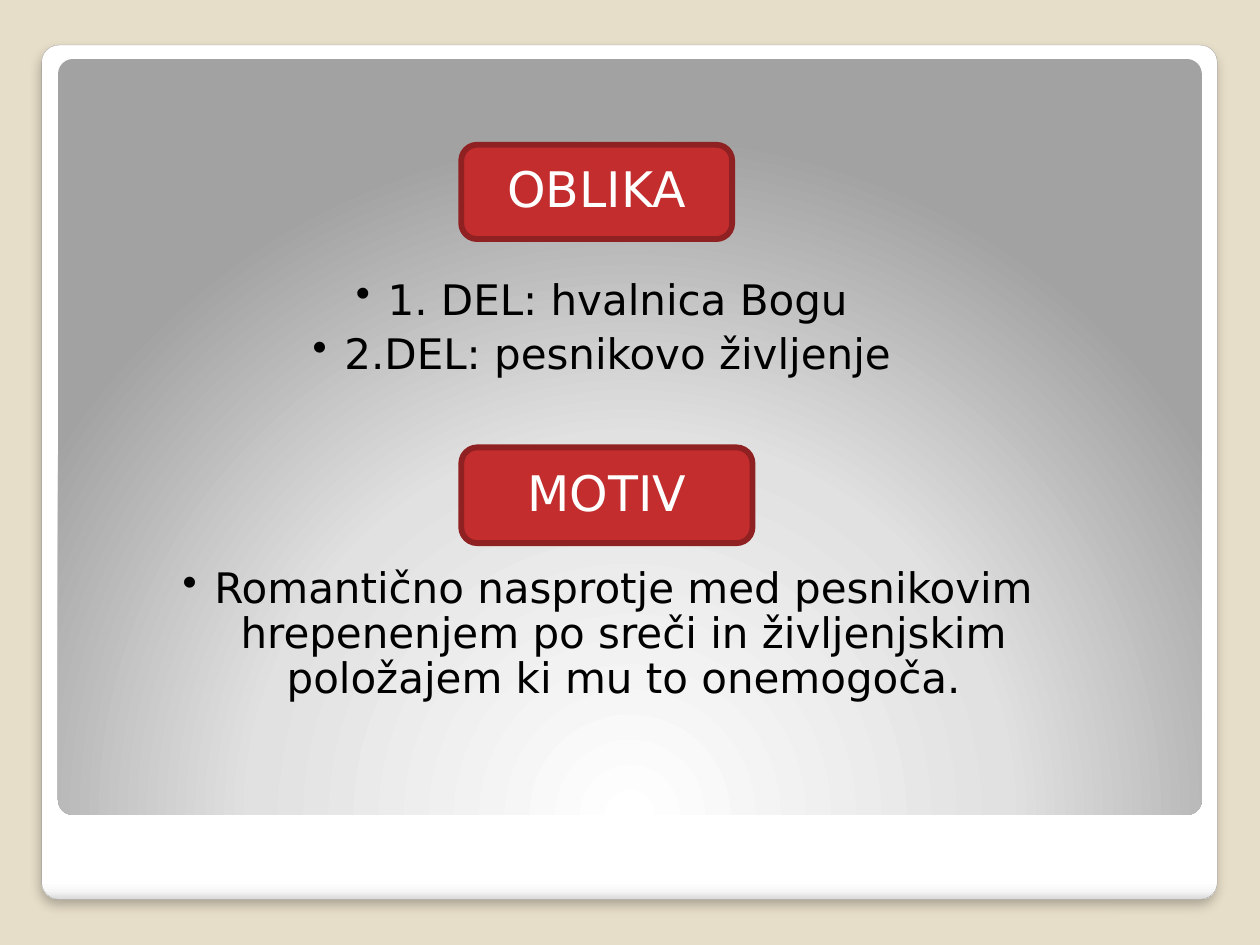
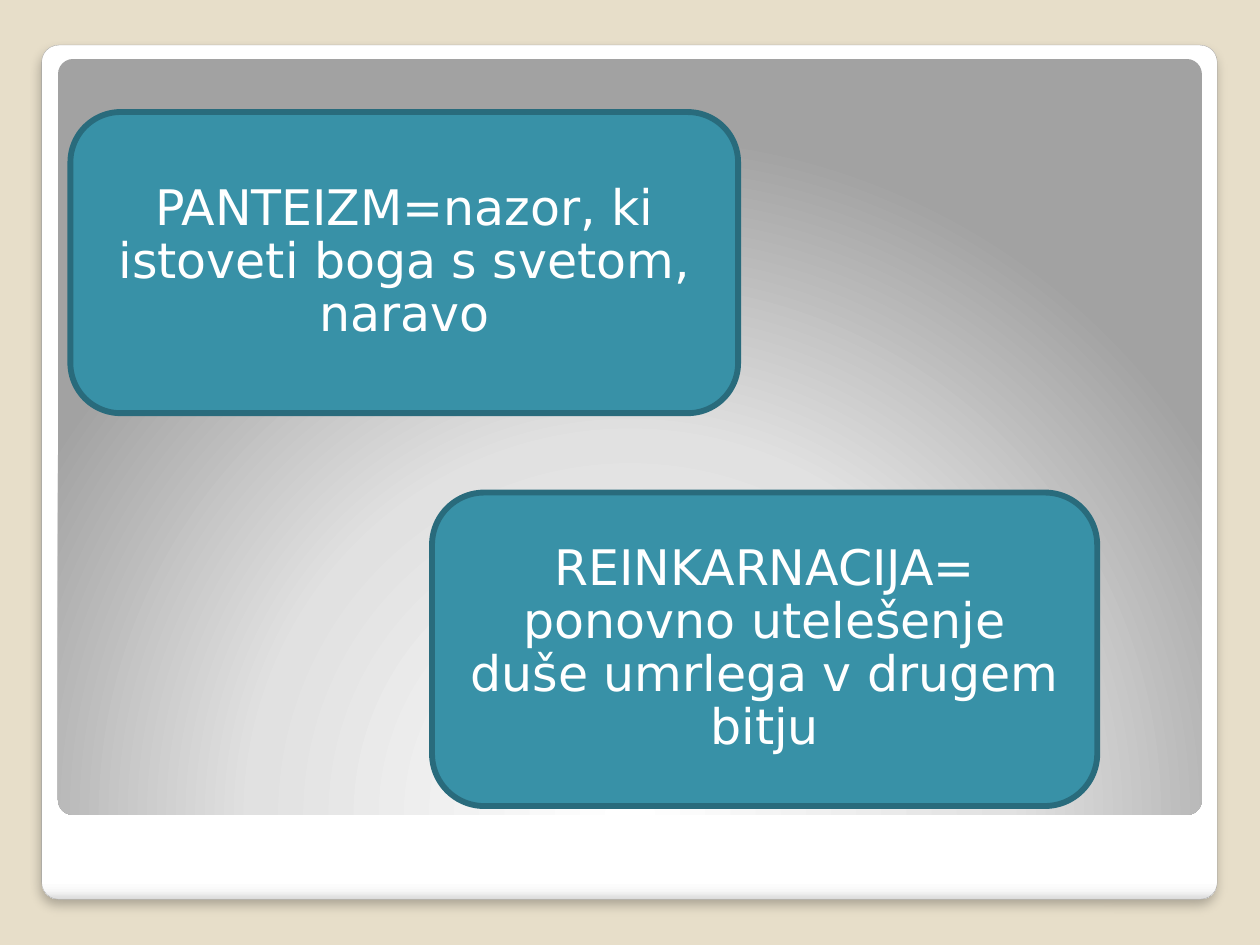
from lxml.etree import SubElement
from pptx import Presentation
from pptx.dml.color import RGBColor
from pptx.enum.shapes import MSO_SHAPE
from pptx.enum.text import MSO_ANCHOR, PP_ALIGN
from pptx.oxml.ns import qn
from pptx.util import Cm, Pt

FONT = "DejaVu Sans"
BACKGROUND, FRAME_LINE = "E7DEC9", "A4A4A4"
RED = ("C32D2E", "902122")
TEAL = ("3891A7", "296B7C")

FRAME_BOX = (0.84, 0.91, 23.7, 17.22)
FRAME_STOPS = [(0, "FFFFFF"), (98, "FFFFFF"), (99, "F7F7F7"), (100, "DADADA")]
PANEL_BOX = (1.17, 1.19, 23.06, 15.24)
PANEL_STOPS = [(0, "FFFFFF"), (55, "E1E1E1"), (100, "A2A2A2")]
PANEL_FOCUS = {"l": 50, "t": 175, "r": 50, "b": -75}

SLIDES = [
    {
        "colours": RED,
        "labels": [
            ("OBLIKA", (9.3, 2.92, 5.46, 1.9)),
            ("MOTIV", (9.3, 9.02, 5.87, 1.93)),
        ],
        "lists": [
            (["1. DEL: hvalnica Bogu", "2.DEL: pesnikovo življenje"],
             (4.5, 5.54, 15.06, 2.67)),
            (["Romantično nasprotje med pesnikovim hrepenenjem po sreči "
              "in življenjskim položajem ki mu to onemogoča."],
             (1.42, 11.35, 21.46, 3.0)),
        ],
    },
    {
        "colours": TEAL,
        "labels": [
            ("PANTEIZM=nazor, ki istoveti boga s svetom, naravo",
             (1.42, 2.26, 13.46, 6.07)),
            ("REINKARNACIJA= ponovno utelešenje duše umrlega v drugem bitju",
             (8.71, 9.93, 13.41, 6.32)),
        ],
        "lists": [],
    },
]


def colour(value):
    return RGBColor.from_string(value)


def lengths(box):
    return [Cm(value) for value in box]


def add_rounded(slide, box, corner=None):
    shape = slide.shapes.add_shape(MSO_SHAPE.ROUNDED_RECTANGLE, *lengths(box))
    shape.shadow.inherit = False
    if corner is not None:
        shape.adjustments[0] = corner
    return shape


def set_line(shape, value, width):
    shape.line.color.rgb = colour(value)
    shape.line.width = Pt(width)


def set_gradient(shape, stops, focus=None):
    properties = shape.element.spPr
    gradient = SubElement(properties, qn("a:gradFill"), rotWithShape="1")
    properties.find(qn("a:prstGeom")).addnext(gradient)
    stop_list = SubElement(gradient, qn("a:gsLst"))
    for position, value in stops:
        stop = SubElement(stop_list, qn("a:gs"), pos=str(position * 1000))
        SubElement(stop, qn("a:srgbClr"), val=value)
    if focus:
        circle = SubElement(gradient, qn("a:path"), path="circle")
        sides = {side: str(share * 1000) for side, share in focus.items()}
        SubElement(circle, qn("a:fillToRect"), **sides)
    else:
        SubElement(gradient, qn("a:lin"), ang="5400000", scaled="0")


def set_shadow(shape):
    effects = shape.element.spPr.find(qn("a:effectLst"))
    shadow = SubElement(effects, qn("a:outerShdw"), blurRad=str(Pt(6)),
                        dist=str(Pt(4)), dir="5400000", rotWithShape="0")
    shade = SubElement(shadow, qn("a:srgbClr"), val="000000")
    SubElement(shade, qn("a:alpha"), val="25000")


def add_backdrop(slide):
    slide.background.fill.solid()
    slide.background.fill.fore_color.rgb = colour(BACKGROUND)
    frame = add_rounded(slide, FRAME_BOX, 0.02)
    set_gradient(frame, FRAME_STOPS)
    set_line(frame, FRAME_LINE, 0.16)
    set_shadow(frame)
    panel = add_rounded(slide, PANEL_BOX, 0.02)
    set_gradient(panel, PANEL_STOPS, PANEL_FOCUS)
    panel.line.fill.background()


def set_insets(text_frame, left, top, right, bottom):
    text_frame.word_wrap = True
    text_frame.margin_left, text_frame.margin_top = Cm(left), Cm(top)
    text_frame.margin_right, text_frame.margin_bottom = Cm(right), Cm(bottom)


def style_paragraph(paragraph, size, value):
    paragraph.alignment = PP_ALIGN.CENTER
    paragraph.line_spacing = 0.9
    for run in paragraph.runs:
        run.font.name = FONT
        run.font.size = Pt(size)
        run.font.color.rgb = colour(value)


def add_label(slide, text, box, colours):
    fill, outline = colours
    label = add_rounded(slide, box)
    label.fill.solid()
    label.fill.fore_color.rgb = colour(fill)
    set_line(label, outline, 3.35)
    text_frame = label.text_frame
    set_insets(text_frame, 0.3, 0.3, 0.3, 0.3)
    text_frame.vertical_anchor = MSO_ANCHOR.MIDDLE
    text_frame.text = text
    style_paragraph(text_frame.paragraphs[0], 28, "FFFFFF")


def add_list(slide, items, box):
    text_frame = slide.shapes.add_textbox(*lengths(box)).text_frame
    set_insets(text_frame, 0.69, 0.08, 0.48, 0.08)
    text_frame.text = "\n".join(items)
    for paragraph in text_frame.paragraphs:
        paragraph.level = 1
        properties = paragraph._p.get_or_add_pPr()
        properties.set("marL", str(Cm(0.64)))
        properties.set("indent", str(-Cm(0.64)))
        SubElement(properties, qn("a:buChar"), char="•")
        style_paragraph(paragraph, 24, "000000")
        paragraph.space_after = Pt(5)


def main():
    presentation = Presentation()
    presentation.slide_width, presentation.slide_height = Cm(25.4), Cm(19.05)
    for content in SLIDES:
        slide = presentation.slides.add_slide(presentation.slide_layouts[6])
        add_backdrop(slide)
        for text, box in content["labels"]:
            add_label(slide, text, box, content["colours"])
        for items, box in content["lists"]:
            add_list(slide, items, box)
    presentation.save("out.pptx")


if __name__ == "__main__":
    main()
